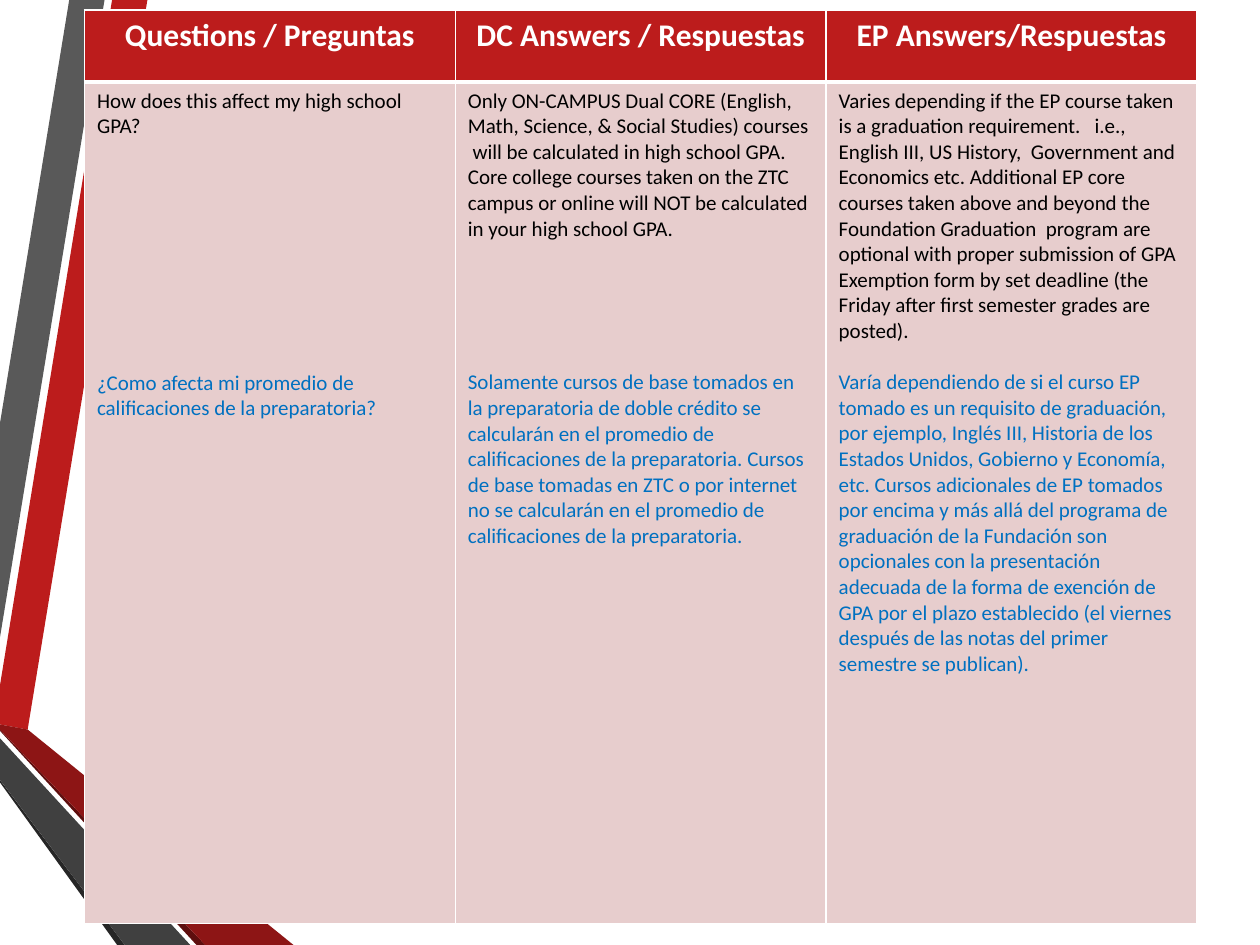
import pptx
import pptx.util
import pptx.dml.color
import pptx.enum.text
import pptx.oxml
import pptx.oxml.ns

# Grid of 1000 columns by 750 rows over the slide
COLS, ROWS = 1000, 750
UNIT = pptx.util.Inches(10) // COLS
LINE = 14.65  # height of one body line, in points
DEEP = 11     # lines from the top of the cell to the Spanish text

COLORS = {
    "red": "BC1C1C", "gray": "595959", "black": "000000", "white": "FFFFFF",
    "dark": "404040", "coal": "262626", "wine": "8D1515", "plum": "5E0E0E",
    "pink": "E7CDCD", "blue": "0070C0",
}

# Ribbons: color and corners on the grid
BANDS = [
    ("red", [(0, 544), (0, 575), (22, 579), (117, 0), (89, 0)]),
    ("gray", [(83, 0), (55, 0), (0, 336), (0, 506)]),
    ("coal", [(0, 619), (0, 621), (93, 750), (99, 750)]),
    ("plum", [(0, 579), (0, 580), (156, 750), (163, 750)]),
    ("wine", [(0, 579), (163, 750), (233, 750), (22, 579), (0, 575)]),
    ("dark", [(0, 619), (99, 750), (151, 750), (0, 586)]),
]

# Table columns: heading, English text, its count of lines, Spanish text
TOPICS = [
    ("Questions / Preguntas",
     "How does this affect my high school GPA?", 2,
     "¿Como afecta mi promedio de calificaciones de la preparatoria?"),
    ("DC Answers / Respuestas",
     "Only ON-CAMPUS Dual CORE (English, Math, Science, & Social Studies) "
     "courses  will be calculated in high school GPA. Core college courses "
     "taken on the ZTC campus or online will NOT be calculated in your high "
     "school GPA.", 6,
     "Solamente cursos de base tomados en la preparatoria de doble crédito se "
     "calcularán en el promedio de calificaciones de la preparatoria. Cursos "
     "de base tomadas en ZTC o por internet no se calcularán en el promedio "
     "de calificaciones de la preparatoria."),
    ("EP Answers/Respuestas",
     "Varies depending if the EP course taken is a graduation requirement.   "
     "i.e., English III, US History,  Government and Economics etc. "
     "Additional EP core courses taken above and beyond the Foundation "
     "Graduation  program are optional with proper submission of GPA "
     "Exemption form by set deadline (the Friday after first semester grades "
     "are posted).", 10,
     "Varía dependiendo de si el curso EP tomado es un requisito de "
     "graduación, por ejemplo, Inglés III, Historia de los Estados Unidos, "
     "Gobierno y Economía, etc. Cursos adicionales de EP tomados por encima "
     "y más allá del programa de graduación de la Fundación son opcionales "
     "con la presentación adecuada de la forma de exención de GPA por el "
     "plazo establecido (el viernes después de las notas del primer semestre "
     "se publican)."),
]


def tint(name):
    return pptx.dml.color.RGBColor.from_string(COLORS[name])


def band(slide, color, dots):
    """Draw one closed ribbon."""
    dots = [(x * UNIT, y * UNIT) for x, y in dots]
    pen = slide.shapes.build_freeform(*dots[0])
    pen.add_line_segments(dots[1:], close=True)
    shape = pen.convert_to_shape()
    shape.shadow.inherit = False
    shape.fill.solid()
    shape.fill.fore_color.rgb = tint(color)
    shape.line.fill.background()


def paint(cell, color, top, base):
    """Set the borders and then the fill of a cell."""
    props = cell._tc.get_or_add_tcPr()
    for side, width in zip("LRTB", (1, 1, top, base)):
        props.append(pptx.oxml.parse_xml(
            f'<a:ln{side} {pptx.oxml.ns.nsdecls("a")} '
            f'w="{pptx.util.Pt(width)}"><a:solidFill>'
            f'<a:srgbClr val="{COLORS["white"]}"/></a:solidFill></a:ln{side}>'))
    cell.fill.solid()
    cell.fill.fore_color.rgb = tint(color)


def write(para, text, size, color, bold=False):
    para.text = text
    font = para.font
    font.name, font.size, font.bold = "Calibri", pptx.util.Pt(size), bold
    font.color.rgb = tint(color)


def chart(slide):
    """Add the table of questions and answers."""
    left, top, wide, head, body = (n * UNIT for n in (67, 8, 883, 57, 668))
    table = slide.shapes.add_table(
        2, len(TOPICS), left, top, wide, head + body).table
    table.rows[0].height, table.rows[1].height = head, body
    for i, (title, english, lines, spanish) in enumerate(TOPICS):
        # Heading
        cell = table.cell(0, i)
        paint(cell, "red", 1, 3)
        para = cell.text_frame.paragraphs[0]
        write(para, title, 18, "white", True)
        para.alignment = pptx.enum.text.PP_ALIGN.CENTER
        # English above, Spanish at one shared height below
        cell = table.cell(1, i)
        paint(cell, "pink", 3, 1)
        write(cell.text_frame.paragraphs[0], english, 12, "black")
        para = cell.text_frame.add_paragraph()
        write(para, spanish, 12, "blue")
        para.space_before = pptx.util.Pt((DEEP - lines) * LINE)


def main():
    deck = pptx.Presentation()
    deck.slide_width, deck.slide_height = COLS * UNIT, ROWS * UNIT
    slide = deck.slides.add_slide(deck.slide_layouts[6])
    for color, dots in BANDS:
        band(slide, color, dots)
    chart(slide)
    deck.save("out.pptx")


if __name__ == "__main__":
    main()
